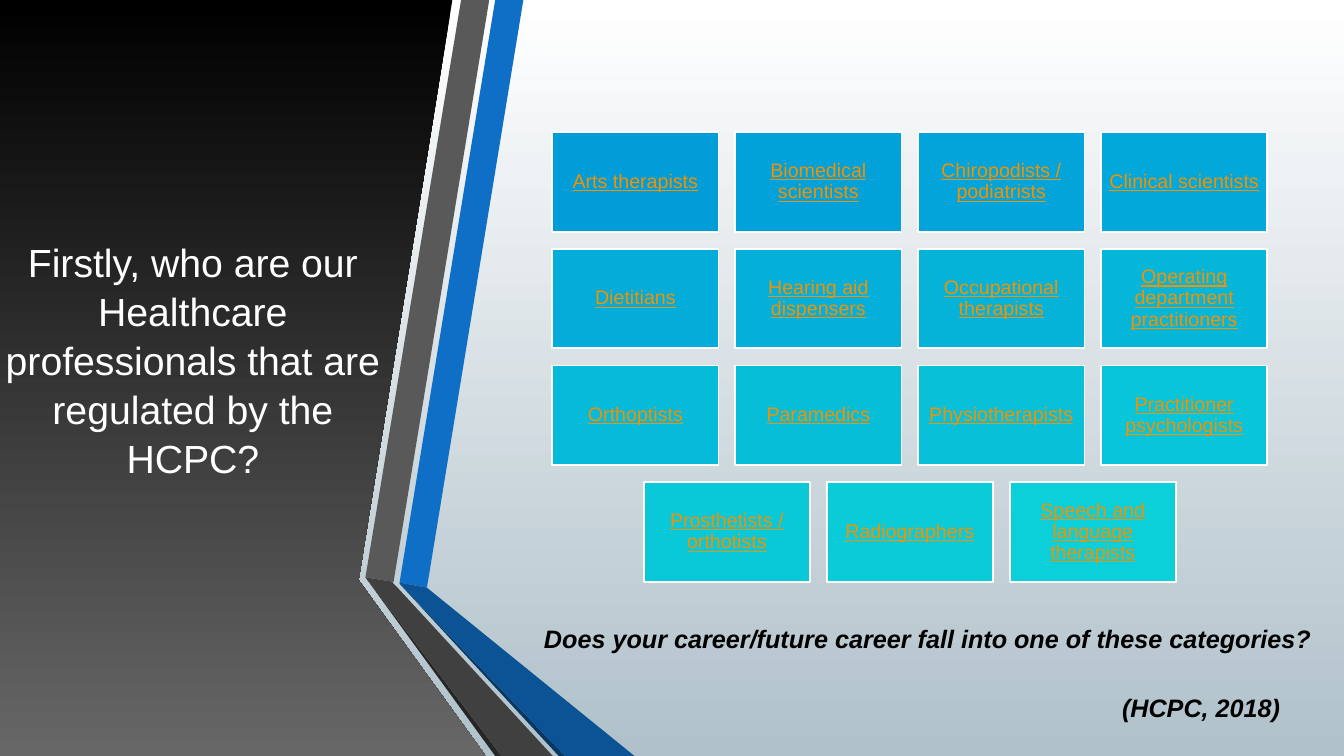
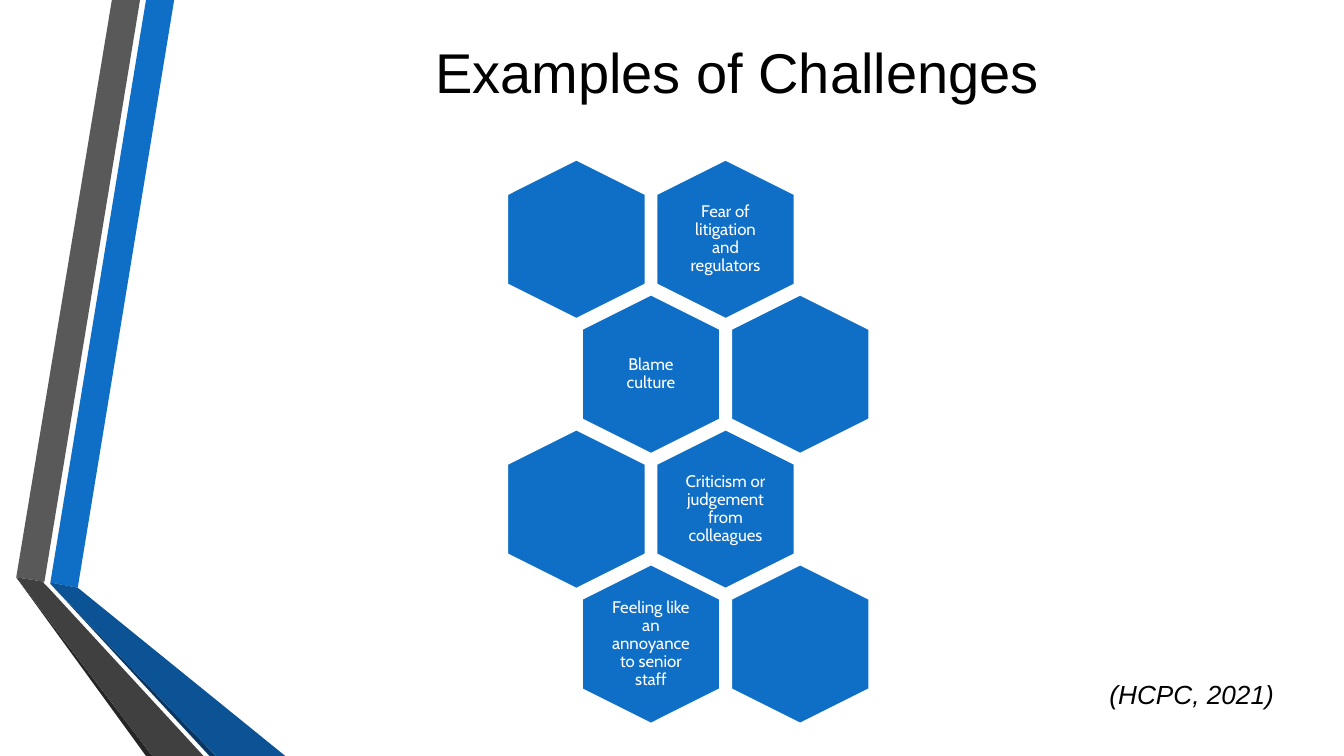
from dataclasses import dataclass

from pptx import Presentation
from pptx.dml.color import RGBColor as Rgb
from pptx.enum.shapes import MSO_SHAPE as Preset
from pptx.enum.text import MSO_ANCHOR as Anchor, PP_ALIGN as Align
from pptx.util import Cm, Pt


@dataclass(frozen=True)
class Theme:
    font: str = "Arial"
    hexagon_font: str = "Cabin"
    black: Rgb = Rgb(0, 0, 0)
    white: Rgb = Rgb(255, 255, 255)
    mist: Rgb = Rgb(0xB0, 0xC1, 0xCA)
    panel_grey: Rgb = Rgb(0x67, 0x67, 0x67)
    blue: Rgb = Rgb(0x0F, 0x6F, 0xC6)
    mid_blue: Rgb = Rgb(0x0B, 0x53, 0x94)
    deep_blue: Rgb = Rgb(0x08, 0x37, 0x63)
    grey: Rgb = Rgb(0x59, 0x59, 0x59)
    mid_grey: Rgb = Rgb(0x40, 0x40, 0x40)
    deep_grey: Rgb = Rgb(0x26, 0x26, 0x26)
    link: Rgb = Rgb(0xF4, 0x91, 0x00)
    card_first: Rgb = Rgb(0x00, 0x9D, 0xD9)
    card_last: Rgb = Rgb(0x0B, 0xD0, 0xD9)
    title: float = 40
    side_title: float = 28
    note: float = 18
    source: float = 18.7
    card: float = 14
    hexagon: float = 12
    outline: float = 1.25


theme = Theme()


def write(shape, text, size, colour, align=Align.CENTER, anchor=Anchor.MIDDLE,
          spacing=1.0, inset=None, font=theme.font, **style):
    frame = shape.text_frame
    frame.word_wrap = True
    frame.vertical_anchor = anchor
    if inset is not None:
        frame.margin_left = frame.margin_right = Cm(inset)
        frame.margin_top = frame.margin_bottom = Cm(inset)
    para = frame.paragraphs[0]
    para.alignment = align
    para.line_spacing = spacing
    span = para.add_run()
    span.text = text
    span.font.name = font
    span.font.size = Pt(size)
    span.font.color.rgb = colour
    for name, value in style.items():
        setattr(span.font, name, value)


def add_outline(page, points, shift=0):
    corners = [(Cm(x + shift), Cm(y)) for x, y in points]
    builder = page.shapes.build_freeform(*corners[0], scale=1.0)
    builder.add_line_segments(corners[1:], close=True)
    outline = builder.convert_to_shape()
    outline.shadow.inherit = False
    outline.line.fill.background()
    return outline


deck = Presentation()
deck.slide_width, deck.slide_height = Cm(33.87), Cm(19.05)
blank = deck.slide_layouts[6]
professions_page = deck.slides.add_slide(blank)
challenges_page = deck.slides.add_slide(blank)

panel = add_outline(professions_page, [(0, 0), (11.4, 0), (9.04, 14.62), (12.24, 19.05), (0, 19.05)])
for fill, top_colour, bottom_colour in (
    (professions_page.background.fill, theme.white, theme.mist),
    (panel.fill, theme.black, theme.panel_grey),
):
    fill.gradient()
    fill.gradient_angle = 270
    for stop, colour in zip(fill.gradient_stops, (top_colour, bottom_colour)):
        stop.color.rgb = colour
challenges_page.background.fill.solid()
challenges_page.background.fill.fore_color.rgb = theme.white

bands = [
    (theme.blue, [(1.27, 14.68), (1.96, 14.81), (4.39, 0), (3.68, 0)]),
    (theme.grey, [(3.53, 0), (2.82, 0), (0.41, 14.55), (1.12, 14.66)]),
    (theme.deep_grey, [(0.41, 14.55), (3.68, 19.05), (3.84, 19.05)]),
    (theme.deep_blue, [(1.27, 14.71), (5.28, 19.05), (5.44, 19.05)]),
    (theme.mid_blue, [(1.27, 14.71), (5.44, 19.05), (7.19, 19.05), (1.96, 14.81), (1.27, 14.68)]),
    (theme.mid_grey, [(5.13, 19.05), (1.22, 14.81), (1.09, 14.68), (1.12, 14.66),
                      (0.41, 14.55), (3.84, 19.05)]),
]
for page, shift in ((professions_page, 8.8), (challenges_page, 0)):
    for colour, points in bands:
        band = add_outline(page, points, shift)
        band.fill.solid()
        band.fill.fore_color.rgb = colour

side_title = professions_page.shapes.add_textbox(Cm(0), Cm(1.9), Cm(9.72), Cm(14.3))
write(side_title, "Firstly, who are our Healthcare professionals that are regulated by the HCPC?",
      theme.side_title, theme.white, spacing=1.04, inset=0)

profession_rows = [
    ["Arts therapists", "Biomedical scientists", "Chiropodists / podiatrists", "Clinical scientists"],
    ["Dietitians", "Hearing aid dispensers", "Occupational therapists", "Operating department practitioners"],
    ["Orthoptists", "Paramedics", "Physiotherapists", "Practitioner psychologists"],
    ["Prosthetists / orthotists", "Radiographers", "Speech and language therapists"],
]
card_left, card_top, card_width, card_height = 13.92, 3.33, 4.19, 2.51
card_step, row_step = 4.61, 2.94
most_cards = len(profession_rows[0])
last_card = sum(len(row) for row in profession_rows) - 1
card_number = 0
for row_number, row in enumerate(profession_rows):
    row_left = card_left + (most_cards - len(row)) * card_step / 2
    for column, profession in enumerate(row):
        card = professions_page.shapes.add_shape(
            Preset.RECTANGLE, Cm(row_left + column * card_step),
            Cm(card_top + row_number * row_step), Cm(card_width), Cm(card_height))
        card.shadow.inherit = False
        card.fill.solid()
        card.fill.fore_color.rgb = Rgb(*(
            round(first + (last - first) * card_number / last_card)
            for first, last in zip(theme.card_first, theme.card_last)))
        card.line.color.rgb = theme.white
        card.line.width = Pt(theme.outline)
        write(card, profession, theme.card, theme.link, spacing=0.9, inset=0.15, underline=True)
        card_number += 1

for text, left, top, width, align in (
    ("Does your career/future career fall into one of these categories?", 13.46, 15.57, 20.17, Align.LEFT),
    ("(HCPC, 2018) ", 15.04, 17.32, 17.65, Align.RIGHT),
):
    note = professions_page.shapes.add_textbox(Cm(left), Cm(top), Cm(width), Cm(1.02))
    write(note, text, theme.note, theme.black, align, Anchor.TOP, bold=True, italic=True)

title = challenges_page.shapes.add_textbox(Cm(4.65), Cm(-0.64), Cm(27.84), Cm(4.88))
write(title, "Examples of Challenges", theme.title, theme.black)

challenge_rows = [
    [None, "Fear of litigation and regulators"],
    ["Blame culture", None],
    [None, "Criticism or judgement from colleagues"],
    ["Feeling like an annoyance to senior staff", None],
]
hexagon_left, hexagon_top, hexagon_width, hexagon_height = 12.52, 4.29, 4.01, 3.48
hexagon_step, hexagon_row_step = 3.76, 3.4
label_width, label_height = 2.41, 2.77
for row_number, row in enumerate(challenge_rows):
    for column, challenge in enumerate(row):
        left = hexagon_left + (column + row_number % 2 / 2) * hexagon_step
        top = hexagon_top + row_number * hexagon_row_step
        hexagon = challenges_page.shapes.add_shape(
            Preset.HEXAGON, Cm(left), Cm(top), Cm(hexagon_width), Cm(hexagon_height))
        hexagon.rotation = 90
        hexagon.adjustments[0] = 0.25
        hexagon.shadow.inherit = False
        hexagon.fill.solid()
        hexagon.fill.fore_color.rgb = theme.blue
        hexagon.line.color.rgb = theme.white
        hexagon.line.width = Pt(theme.outline)
        if challenge:
            label = challenges_page.shapes.add_textbox(
                Cm(left + (hexagon_width - label_width) / 2),
                Cm(top + (hexagon_height - label_height) / 2), Cm(label_width), Cm(label_height))
            write(label, challenge, theme.hexagon, theme.white, spacing=0.9, inset=0.13,
                  font=theme.hexagon_font)

source = challenges_page.shapes.add_textbox(Cm(27.71), Cm(17.12), Cm(4.78), Cm(1.14))
write(source, "(HCPC, 2021)", theme.source, theme.black, Align.LEFT, Anchor.TOP,
      spacing=0.8, italic=True)

deck.save("out.pptx")
